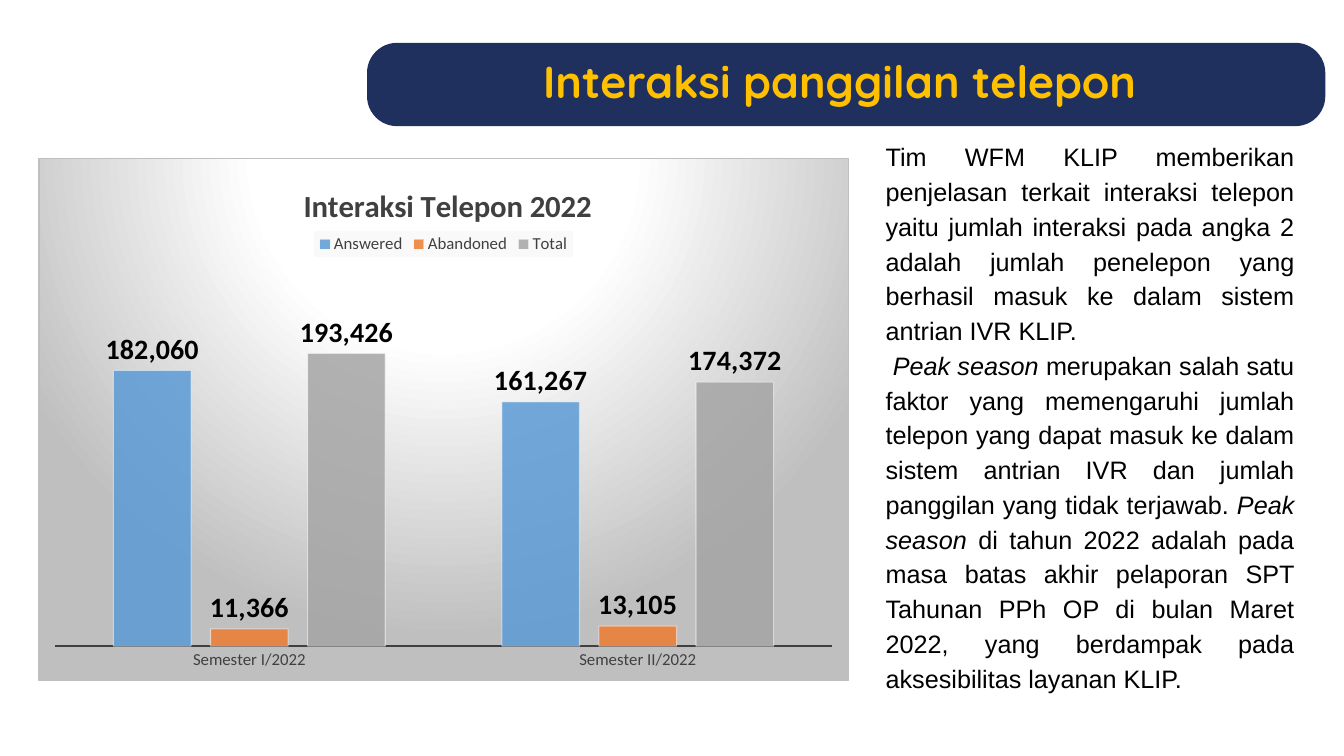
from lxml import etree
from pptx import Presentation
from pptx.chart.data import CategoryChartData
from pptx.dml.color import RGBColor
from pptx.enum.chart import XL_CHART_TYPE as ChartType, XL_LABEL_POSITION as LabelPosition
from pptx.enum.chart import XL_LEGEND_POSITION as LegendPosition, XL_TICK_MARK as TickMark
from pptx.enum.shapes import MSO_SHAPE as Shape
from pptx.enum.text import MSO_AUTO_SIZE as AutoSize, PP_ALIGN as Align
from pptx.oxml import parse_xml
from pptx.oxml.ns import qn
from pptx.util import Cm, Pt

# Content
TITLE = "Interaksi panggilan telepon "
CHART_TITLE = "Interaksi Telepon 2022"
SEMESTERS = ["Semester I/2022", "Semester II/2022"]
NAVY = RGBColor(0x1F, 0x30, 0x5F)
GOLD = RGBColor(0xFF, 0xC0, 0x00)
BLACK = RGBColor(0, 0, 0)
WHITE = RGBColor(0xFF, 0xFF, 0xFF)
DARK_GREY = RGBColor(0x40, 0x40, 0x40)
BLUE = RGBColor(0x5B, 0x9B, 0xD5)
ORANGE = RGBColor(0xED, 0x7D, 0x31)
GREY = RGBColor(0xA5, 0xA5, 0xA5)
CALLS = [
    ("Answered", (182060, 161267), BLUE),
    ("Abandoned", (11366, 13105), ORANGE),
    ("Total", (193426, 174372), GREY),
]
# Each paragraph is a list of (text, italic)
EXPLANATION = [
    [("Tim WFM KLIP memberikan penjelasan terkait interaksi telepon yaitu jumlah "
      "interaksi pada angka 2 adalah jumlah penelepon yang berhasil masuk ke dalam "
      "sistem antrian IVR KLIP.", False)],
    [(" ", False),
     ("Peak season ", True),
     ("merupakan salah satu faktor yang memengaruhi jumlah telepon yang dapat masuk "
      "ke dalam sistem antrian IVR dan jumlah panggilan yang tidak terjawab. ", False),
     ("Peak season", True),
     (" di tahun 2022 adalah pada masa batas akhir pelaporan SPT Tahunan PPh OP di "
      "bulan Maret 2022, yang berdampak pada aksesibilitas layanan KLIP.", False)],
]

NAMESPACES = (
    'xmlns:c="http://schemas.openxmlformats.org/drawingml/2006/chart" '
    'xmlns:a="http://schemas.openxmlformats.org/drawingml/2006/main"'
)
CHART_BACKGROUND = f"""<c:spPr {NAMESPACES}>
  <a:gradFill><a:gsLst>
    <a:gs pos="0"><a:srgbClr val="FFFFFF"/></a:gs>
    <a:gs pos="39000"><a:srgbClr val="FFFFFF"/></a:gs>
    <a:gs pos="100000"><a:srgbClr val="BFBFBF"/></a:gs>
  </a:gsLst><a:path path="circle">
    <a:fillToRect l="50000" t="-80000" r="50000" b="180000"/>
  </a:path></a:gradFill>
  <a:ln w="9525"><a:solidFill><a:srgbClr val="BFBFBF"/></a:solidFill></a:ln>
</c:spPr>"""
LEGEND_BACKGROUND = f"""<c:spPr {NAMESPACES}><a:solidFill>
  <a:srgbClr val="F2F2F2"><a:alpha val="39000"/></a:srgbClr>
</a:solidFill></c:spPr>"""


def set_font(font, name, size, color, bold=False):
    font.name, font.size, font.bold = name, Pt(size), bold
    font.color.rgb = color


def set_opacity(parent, percent):
    for color in parent.iter(qn("a:srgbClr")):
        etree.SubElement(color, qn("a:alpha")).set("val", str(percent * 1000))


def place(element, index, **fractions):
    """Fix a chart part by fractions of the chart area."""
    for old in element.findall(qn("c:layout")):
        element.remove(old)
    target = '<c:layoutTarget val="inner"/>' if element.tag == qn("c:plotArea") else ""
    modes = '<c:xMode val="edge"/><c:yMode val="edge"/>'
    sizes = "".join(f'<c:{key} val="{value}"/>' for key, value in fractions.items())
    element.insert(index, parse_xml(
        f"<c:layout {NAMESPACES}><c:manualLayout>{target}{modes}{sizes}"
        "</c:manualLayout></c:layout>"))


def add_text(page, left, top, width, height):
    box = page.shapes.add_textbox(Cm(left), Cm(top), Cm(width), Cm(height))
    box.text_frame.word_wrap = True
    box.text_frame.auto_size = AutoSize.SHAPE_TO_FIT_TEXT
    return box.text_frame


def add_banner(page):
    banner = page.shapes.add_shape(
        Shape.ROUNDED_RECTANGLE, Cm(9.25), Cm(1.08), Cm(24.15), Cm(2.1))
    banner.adjustments[0] = 0.36
    banner.shadow.inherit = False
    banner.fill.solid()
    banner.fill.fore_color.rgb = NAVY
    banner.line.fill.background()
    para = add_text(page, 9.25, 1.24, 24.15, 1.63).paragraphs[0]
    para.text = TITLE
    para.alignment = Align.CENTER
    set_font(para.runs[0].font, "Quicksand", 32, GOLD, True)


def add_call_chart(page):
    data = CategoryChartData(number_format="#,##0")
    data.categories = SEMESTERS
    for name, values, _ in CALLS:
        data.add_series(name, values)
    chart = page.shapes.add_chart(
        ChartType.COLUMN_CLUSTERED, Cm(0.97), Cm(3.97), Cm(20.42), Cm(13.18), data).chart
    set_font(chart.font, "Calibri", 10, BLACK)

    # Title and legend
    chart.has_title = True
    heading = chart.chart_title
    heading.text_frame.text = CHART_TITLE
    set_font(heading.text_frame.paragraphs[0].runs[0].font, "Calibri", 22, DARK_GREY, True)
    heading.include_in_layout = False
    place(heading._element, 1, x=0.32, y=0.04)
    chart.has_legend = True
    legend = chart.legend
    legend.position = LegendPosition.TOP
    legend.include_in_layout = False
    set_font(legend.font, "Calibri", 12, DARK_GREY)
    place(legend._element, 1, x=0.34, y=0.14, w=0.32, h=0.05)
    legend._element.find(qn("c:overlay")).addnext(parse_xml(LEGEND_BACKGROUND))

    # Axes
    semesters, amounts = chart.category_axis, chart.value_axis
    semesters.major_tick_mark = semesters.minor_tick_mark = TickMark.NONE
    set_font(semesters.tick_labels.font, "Calibri", 12, DARK_GREY)
    semesters.format.line.color.rgb = DARK_GREY
    semesters.format.line.width = Pt(1.5)
    amounts.minimum_scale, amounts.maximum_scale = 0, 250000
    amounts.has_major_gridlines = False
    amounts.visible = False

    # Columns
    plot = chart.plots[0]
    plot.gap_width, plot.overlap = 150, -25
    plot.vary_by_categories = False
    for series, (_, _, color) in zip(plot.series, CALLS):
        look = series.format
        look.fill.solid()
        look.fill.fore_color.rgb = color
        look.line.color.rgb = WHITE
        look.line.width = Pt(0.75)
        properties = series._element.find(qn("c:spPr"))
        set_opacity(properties.find(qn("a:solidFill")), 85)
        set_opacity(properties.find(qn("a:ln")), 50)
        labels = series.data_labels
        labels.show_value = True
        labels.number_format, labels.number_format_is_linked = "#,##0", False
        labels.position = LabelPosition.OUTSIDE_END
        set_font(labels.font, "Calibri", 20, BLACK, True)

    # Plot position and background
    body = chart._chartSpace.find(qn("c:chart"))
    place(body.find(qn("c:plotArea")), 0, x=0.02, y=0.21, w=0.96, h=0.725)
    body.addnext(parse_xml(CHART_BACKGROUND))


def add_explanation(page):
    frame = add_text(page, 22.07, 3.33, 10.8, 14.35)
    for index, pieces in enumerate(EXPLANATION):
        para = frame.add_paragraph() if index else frame.paragraphs[0]
        para.alignment = Align.JUSTIFY
        para.line_spacing = 1.15
        for text, italic in pieces:
            span = para.add_run()
            span.text = text
            set_font(span.font, "Arial", 18, BLACK)
            span.font.italic = italic


def main():
    deck = Presentation()
    deck.slide_width, deck.slide_height = Cm(33.87), Cm(19.05)
    page = deck.slides.add_slide(deck.slide_layouts[6])
    add_banner(page)
    add_call_chart(page)
    add_explanation(page)
    deck.save("out.pptx")


if __name__ == "__main__":
    main()
